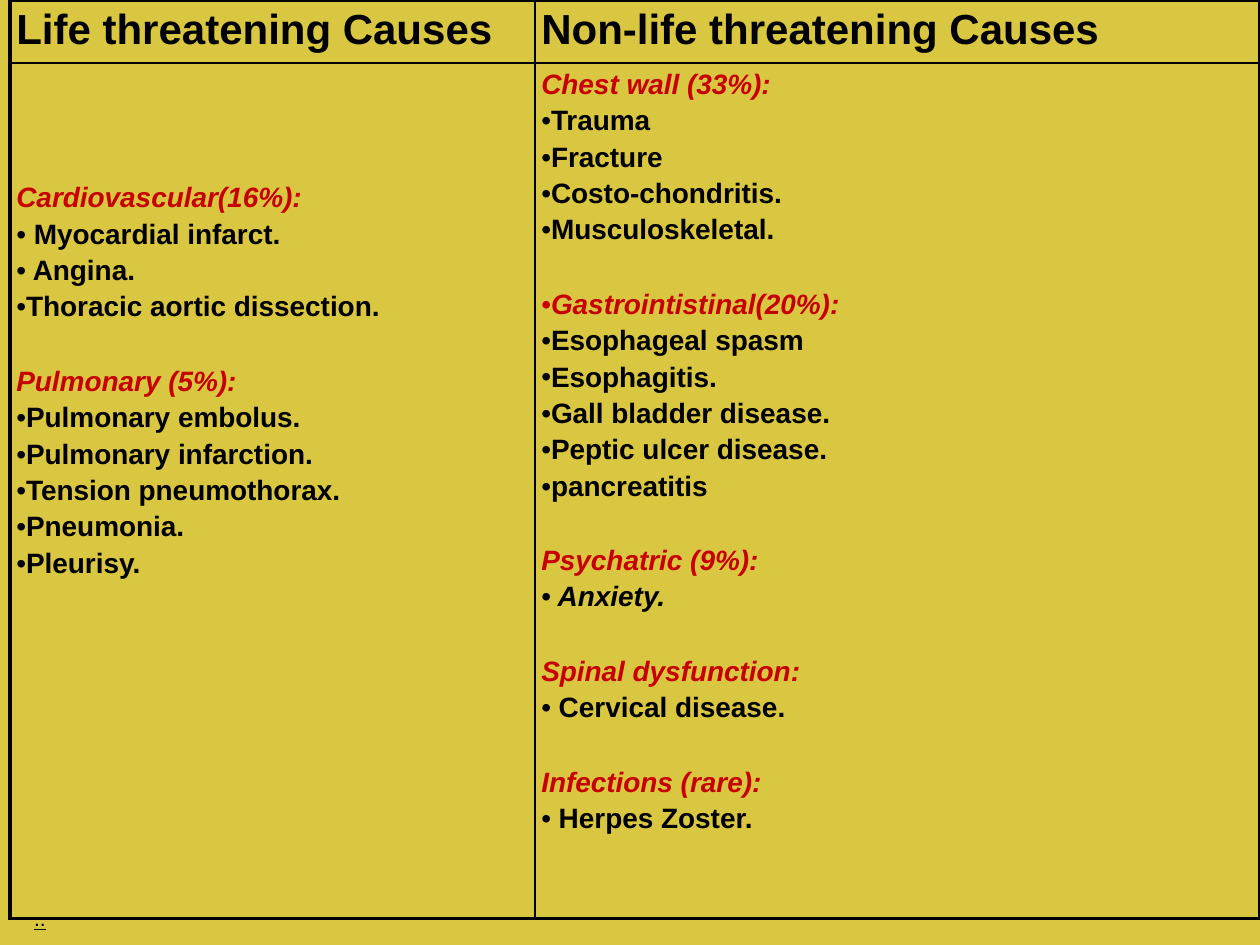
from pptx import Presentation
from pptx import util as u
from pptx.dml.color import RGBColor
from pptx.enum import text
from pptx.oxml import parse_xml
from pptx.oxml.ns import nsdecls

WIDE, HIGH = 10, 7.5
INK, RED, GOLD = "000000", "C70000", "D9C641"
PAD = 0.05
HEADS = ["Life threatening Causes", "Non-life threatening Causes"]

# Each group: heading, its items, whether heading has a bullet, whether items slant
LEFT = [
    ("Cardiovascular(16%):",
     [" Myocardial infarct.", " Angina.", "Thoracic aortic dissection."], False, False),
    ("Pulmonary (5%):",
     ["Pulmonary embolus.", "Pulmonary infarction.", "Tension pneumothorax.",
      "Pneumonia.", "Pleurisy."], False, False),
]
RIGHT = [
    ("Chest wall (33%):",
     ["Trauma", "Fracture", "Costo-chondritis.", "Musculoskeletal."], False, False),
    ("Gastrointistinal(20%):",
     ["Esophageal spasm", "Esophagitis.", "Gall bladder disease.",
      "Peptic ulcer disease.", "pancreatitis"], True, False),
    ("Psychatric (9%):", [" Anxiety."], False, True),
    ("Spinal dysfunction:", [" Cervical disease."], False, False),
    ("Infections (rare):", [" Herpes Zoster."], False, False),
]


def color(hexa):
    return RGBColor.from_string(hexa)


def style(para, size, hue=INK, bold=True, slant=False, gap=0):
    para.space_before = u.Pt(gap)
    font = para.font
    font.name, font.size = "Arial", u.Pt(size)
    font.bold, font.italic = bold, slant
    font.color.rgb = color(hue)


def bullet(para):
    props = para._p.get_or_add_pPr()
    props.set("marL", "0")
    props.set("indent", "0")
    for mark in ('buFont {} typeface="Arial"', 'buChar {} char="•"'):
        props.append(parse_xml(f'<a:{mark.format(nsdecls("a"))}/>'))


def inset(box, top=PAD):
    box.margin_left = box.margin_right = box.margin_bottom = u.Inches(PAD)
    box.margin_top = u.Inches(top)


def border(cell, sides):
    """Draw the cell's four edges; sides maps L, R, T, B to points."""
    props = cell._tc.get_or_add_tcPr()
    for spot, (side, width) in enumerate(sides.items()):
        props.insert(spot, parse_xml(
            f'<a:ln{side} {nsdecls("a")} w="{u.Pt(width)}"><a:solidFill>'
            f'<a:srgbClr val="{INK}"/></a:solidFill></a:ln{side}>'))


def fill_list(cell, groups):
    frame = cell.text_frame
    para = frame.paragraphs[0]
    for rank, (head, items, dotted, slant) in enumerate(groups):
        if rank:
            para = frame.add_paragraph()
        para.text = head
        if dotted:
            bullet(para)
        style(para, 16, RED, slant=True, gap=24.75 if rank else 3)
        for item in items:
            para = frame.add_paragraph()
            para.text = item
            bullet(para)
            style(para, 16, slant=slant, gap=3)


def causes(slide, left, top, width, height):
    table = slide.shapes.add_table(
        2, 2, *map(u.Inches, (left, top, width, height))).table
    table.first_row = table.horz_banding = False
    for col, share in zip(table.columns, (0.42, 0.58)):
        col.width = u.Inches(width * share)
    for row, size in zip(table.rows, (0.5, height - 0.5)):
        row.height = u.Inches(size)

    # Thick frame, thin inner rules
    for r in range(2):
        for c in range(2):
            cell = table.cell(r, c)
            cell.fill.background()
            inset(cell)
            border(cell, {"L": 1 if c else 2.25, "R": 2.25 if c else 1,
                          "T": 1 if r else 2.25, "B": 2.25 if r else 1})

    # Headings and lists
    for c, (head, groups) in enumerate(zip(HEADS, (LEFT, RIGHT))):
        para = table.cell(0, c).text_frame.paragraphs[0]
        para.text = head
        style(para, 24, gap=5)
        fill_list(table.cell(1, c), groups)
    inset(table.cell(1, 0), top=0.95)


def footer(slide, left, top, width, height):
    frame = slide.shapes.add_textbox(
        *map(u.Inches, (left, top, width, height))).text_frame
    frame.word_wrap = True
    frame.auto_size = text.MSO_AUTO_SIZE.SHAPE_TO_FIT_TEXT
    inset(frame)
    para = frame.paragraphs[0]
    para.text = ".."
    style(para, 12, bold=False)
    para.font.underline = True


def main():
    deck = Presentation()
    deck.slide_width, deck.slide_height = u.Inches(WIDE), u.Inches(HIGH)
    slide = deck.slides.add_slide(deck.slide_layouts[6])
    back = slide.background.fill
    back.solid()
    back.fore_color.rgb = color(GOLD)
    causes(slide, 0.08, 0, WIDE - 0.08, 7.29)
    footer(slide, 0.22, 7.14, 9.48, 0.29)
    deck.save("out.pptx")


if __name__ == "__main__":
    main()
